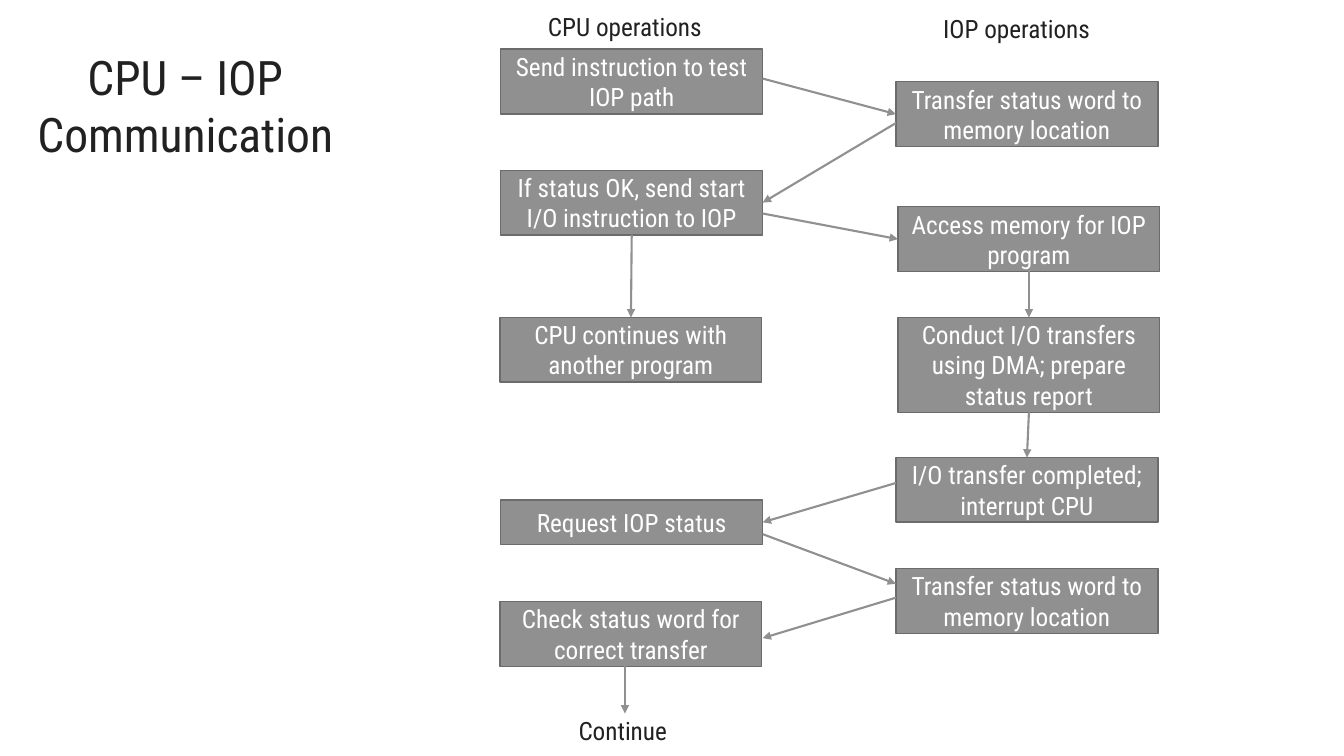
from lxml import etree
from pptx import Presentation
from pptx.dml.color import RGBColor
from pptx.enum.shapes import MSO_CONNECTOR as Connector, MSO_SHAPE as Shape
from pptx.enum.text import MSO_ANCHOR as Anchor, MSO_AUTO_SIZE as AutoSize, PP_ALIGN as Align
from pptx.oxml.ns import qn
from pptx.util import Cm, Pt

COLORS = {"fill": "909090", "border": "6B6B6B", "light": "FFFFFF", "dark": "212121"}
TOP, LEFT, BOTTOM, RIGHT = range(4)
BOX_WIDTH = 6.6
CPU, CPU_INNER = 12.62, 12.6
IOP, IOP_INNER = 22.58, 22.63
CPU_EDGE = CPU + BOX_WIDTH

BOXES = {
    "test": (CPU, 1.24, 1.63, "Send instruction to test IOP path"),
    "first status": (IOP, 2.06, 1.63, "Transfer status word to memory location"),
    "start": (CPU, 4.29, 1.63, "If status OK, send start I/O instruction to IOP"),
    "access": (IOP_INNER, 5.21, 1.63, "Access memory for IOP program"),
    "continue": (CPU_INNER, 8, 1.63, "CPU continues with another program"),
    "conduct": (IOP_INNER, 8, 2.39,
                "Conduct I/O transfers using DMA; prepare status report"),
    "completed": (IOP, 11.53, 1.63, "I/O transfer completed; interrupt CPU"),
    "request": (CPU, 12.6, 1.12, "Request IOP status"),
    "second status": (IOP, 14.33, 1.63, "Transfer status word to memory location"),
    "check": (CPU_INNER, 15.16, 1.63, "Check status word for correct transfer"),
}

ARROWS = [
    ((CPU_EDGE, 1.98), ("first status", LEFT)),
    ((IOP, 3.1), ("start", RIGHT)),
    ((CPU_EDGE, 5.38), ("access", LEFT)),
    (("start", BOTTOM), ("continue", TOP)),
    (("access", BOTTOM), ("conduct", TOP)),
    (("conduct", BOTTOM), ("completed", TOP)),
    ((IOP, 12.17), ("request", RIGHT)),
    ((CPU_EDGE, 13.46), (IOP, 14.71)),
    ((IOP, 15.06), (CPU_EDGE, 16.08)),
    ((15.75, 16.79), (15.75, 17.98)),
]

LABELS = [
    (13.56, 0.15, 4.75, "CPU operations"),
    (23.52, 0.2, 4.75, "IOP operations"),
    (14.33, 17.91, 2.95, "Continue"),
]


class FlowSlide:
    """Draw flow chart elements on one slide in a shared style."""

    font_name = "Roboto Condensed"

    def __init__(self, slide):
        self.shapes = slide.shapes
        self.boxes = {}

    def color(self, name):
        return RGBColor.from_string(COLORS[name])

    def add_text(self, frame, text, size, color, align):
        frame.word_wrap = True
        paragraph = frame.paragraphs[0]
        paragraph.alignment = align
        run = paragraph.add_run()
        run.text = text
        run.font.name = self.font_name
        run.font.size = Pt(size)
        run.font.color.rgb = self.color(color)

    def box(self, name, left, top, height, text):
        shape = self.shapes.add_shape(
            Shape.RECTANGLE, Cm(left), Cm(top), Cm(BOX_WIDTH), Cm(height))
        shape.shadow.inherit = False
        shape.fill.solid()
        shape.fill.fore_color.rgb = self.color("fill")
        shape.line.color.rgb = self.color("border")
        shape.line.width = Pt(1)
        shape.text_frame.vertical_anchor = Anchor.MIDDLE
        self.add_text(shape.text_frame, text, 18, "light", Align.CENTER)
        self.boxes[name] = shape

    def label(self, left, top, width, text, height=1.02, size=18, align=Align.LEFT):
        shape = self.shapes.add_textbox(Cm(left), Cm(top), Cm(width), Cm(height))
        shape.text_frame.auto_size = AutoSize.SHAPE_TO_FIT_TEXT
        self.add_text(shape.text_frame, text, size, "dark", align)

    def arrow(self, begin, end):
        connector = self.shapes.add_connector(Connector.STRAIGHT, 0, 0, 0, 0)
        if begin[0] in self.boxes:
            connector.begin_connect(self.boxes[begin[0]], begin[1])
        else:
            connector.begin_x, connector.begin_y = map(Cm, begin)
        if end[0] in self.boxes:
            connector.end_connect(self.boxes[end[0]], end[1])
        else:
            connector.end_x, connector.end_y = map(Cm, end)
        connector.line.color.rgb = self.color("fill")
        connector.line.width = Pt(1.5)
        properties = connector.element.spPr
        etree.SubElement(properties.find(qn("a:ln")), qn("a:tailEnd"), type="triangle")
        etree.SubElement(properties, qn("a:effectLst"))


def main():
    presentation = Presentation()
    presentation.slide_width = Cm(33.87)
    presentation.slide_height = Cm(19.05)
    chart = FlowSlide(presentation.slides.add_slide(presentation.slide_layouts[6]))
    for name, box in BOXES.items():
        chart.box(name, *box)
    for begin, end in ARROWS:
        chart.arrow(begin, end)
    for label in LABELS:
        chart.label(*label)
    chart.label(0.48, 1.09, 8.38, "CPU – IOP Communication",
                height=3.18, size=34, align=Align.CENTER)
    presentation.save("out.pptx")


if __name__ == "__main__":
    main()
